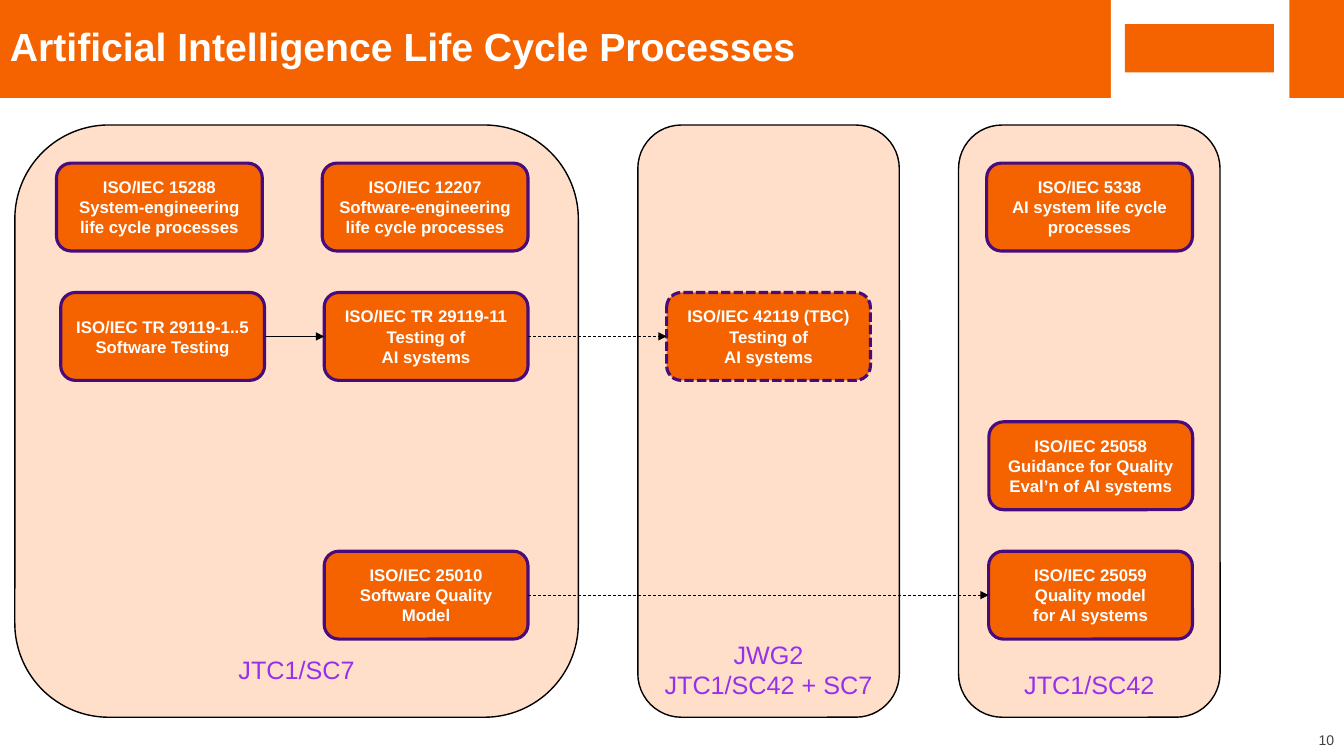
"""Build a slide that maps the AI life cycle standards to their committees."""
from pptx import Presentation
from pptx.util import Pt
from pptx.dml.color import RGBColor
from pptx.enum.dml import MSO_LINE as Dash
from pptx.enum.shapes import MSO_SHAPE as Form, MSO_CONNECTOR as Link
from pptx.enum.text import MSO_ANCHOR as Anchor, PP_ALIGN as Align
from pptx.oxml.ns import qn
from lxml.etree import SubElement

HUES = {
    "orange": "F46300", "peach": "FFDFCA", "purple": "480B7C",
    "violet": "9630ED", "white": "FFFFFF", "black": "000000", "grey": "404040",
}


def hue(name):
    return RGBColor.from_string(HUES[name])


def write(shape, text, size=12, color="white", bold=False,
          align=Align.CENTER, anchor=Anchor.MIDDLE, space=None):
    frame = shape.text_frame
    frame.word_wrap = True
    frame.vertical_anchor = anchor
    frame.text = text
    for para in frame.paragraphs:
        para.alignment = align
        para.line_spacing = space
        font = para.font
        font.name, font.size, font.bold = "Arial", Pt(size), bold
        font.color.rgb = hue(color)


deck = Presentation()
deck.slide_width, deck.slide_height = Pt(960), Pt(540)
slide = deck.slides.add_slide(deck.slide_layouts[6])
shapes = slide.shapes

plain = [
    (0, 0, 960, 70, "orange"),
    (793.5, 0, 127.5, 100.8, "white"),
    (803.5, 17.3, 106.5, 34.5, "orange"),
]
for x, y, wide, high, fill in plain:
    block = shapes.add_shape(Form.RECTANGLE, Pt(x), Pt(y), Pt(wide), Pt(high))
    block.shadow.inherit = False
    block.fill.solid()
    block.fill.fore_color.rgb = hue(fill)
    block.line.fill.background()

title = shapes.add_textbox(0, 0, Pt(793.5), Pt(70))
write(title, "Artificial Intelligence Life Cycle Processes", size=28,
      bold=True, align=Align.LEFT, space=0.9)
number = shapes.add_textbox(Pt(804.5), Pt(519), Pt(155.5), Pt(21))
write(number, "10", size=10, color="grey", align=Align.RIGHT, anchor=Anchor.TOP)

panels = [
    (10.6, 402.5, "JTC1/SC7"),
    (455.6, 186.8, "JWG2\vJTC1/SC42 + SC7"),
    (684.7, 186.8, "JTC1/SC42"),
]
for x, wide, text in panels:
    panel = shapes.add_shape(Form.ROUNDED_RECTANGLE, Pt(x), Pt(89.3), Pt(wide), Pt(423))
    panel.shadow.inherit = False
    panel.fill.solid()
    panel.fill.fore_color.rgb = hue("peach")
    panel.line.color.rgb = hue("black")
    panel.line.width = Pt(1)
    write(panel, text, size=18, color="violet", anchor=Anchor.BOTTOM)

TOP, STEP, HIGH = 116.5, 92.4, 62.8
cards = [
    ("system", 40.4, 0, 147, "ISO/IEC 15288\vSystem-engineering\vlife cycle processes"),
    ("software", 230.2, 0, 147, "ISO/IEC 12207\vSoftware-engineering\vlife cycle processes"),
    ("life", 704.8, 0, 147, "ISO/IEC 5338\vAI system life cycle processes"),
    ("tests", 43.4, 1, 145.6, "ISO/IEC TR 29119-1..5\nSoftware Testing"),
    ("report", 231.6, 1, 145.6, "ISO/IEC TR 29119-11\nTesting of\vAI systems"),
    ("planned", 476.2, 1, 145.6, "ISO/IEC 42119 (TBC)\nTesting of\vAI systems"),
    ("guide", 706.4, 2, 145.6, "ISO/IEC 25058\nGuidance for Quality\vEval’n of AI systems"),
    ("model", 231.6, 3, 145.6, "ISO/IEC 25010\nSoftware Quality Model"),
    ("quality", 706.2, 3, 145.6, "ISO/IEC 25059\nQuality model\vfor AI systems"),
]
boxes = {}
for name, x, row, wide, text in cards:
    box = shapes.add_shape(Form.ROUNDED_RECTANGLE, Pt(x), Pt(TOP + row * STEP),
                           Pt(wide), Pt(HIGH))
    box.shadow.inherit = False
    box.fill.solid()
    box.fill.fore_color.rgb = hue("orange")
    box.line.color.rgb = hue("purple")
    box.line.width = Pt(2.25)
    write(box, text, bold=True)
    boxes[name] = box
boxes["planned"].line.dash_style = Dash.SQUARE_DOT

RIGHT, LEFT = 3, 1
arrows = [
    ("tests", "report", None),
    ("report", "planned", Dash.DASH),
    ("model", "quality", Dash.DASH),
]
for start, end, dash in arrows:
    arrow = shapes.add_connector(Link.STRAIGHT, 0, 0, 0, 0)
    arrow.begin_connect(boxes[start], RIGHT)
    arrow.end_connect(boxes[end], LEFT)
    arrow.line.color.rgb = hue("black")
    arrow.line.width = Pt(0.5)
    arrow.line.dash_style = dash
    SubElement(arrow.line._get_or_add_ln(), qn("a:tailEnd"), type="triangle")
    SubElement(arrow._element.spPr, qn("a:effectLst"))

deck.save("out.pptx")
